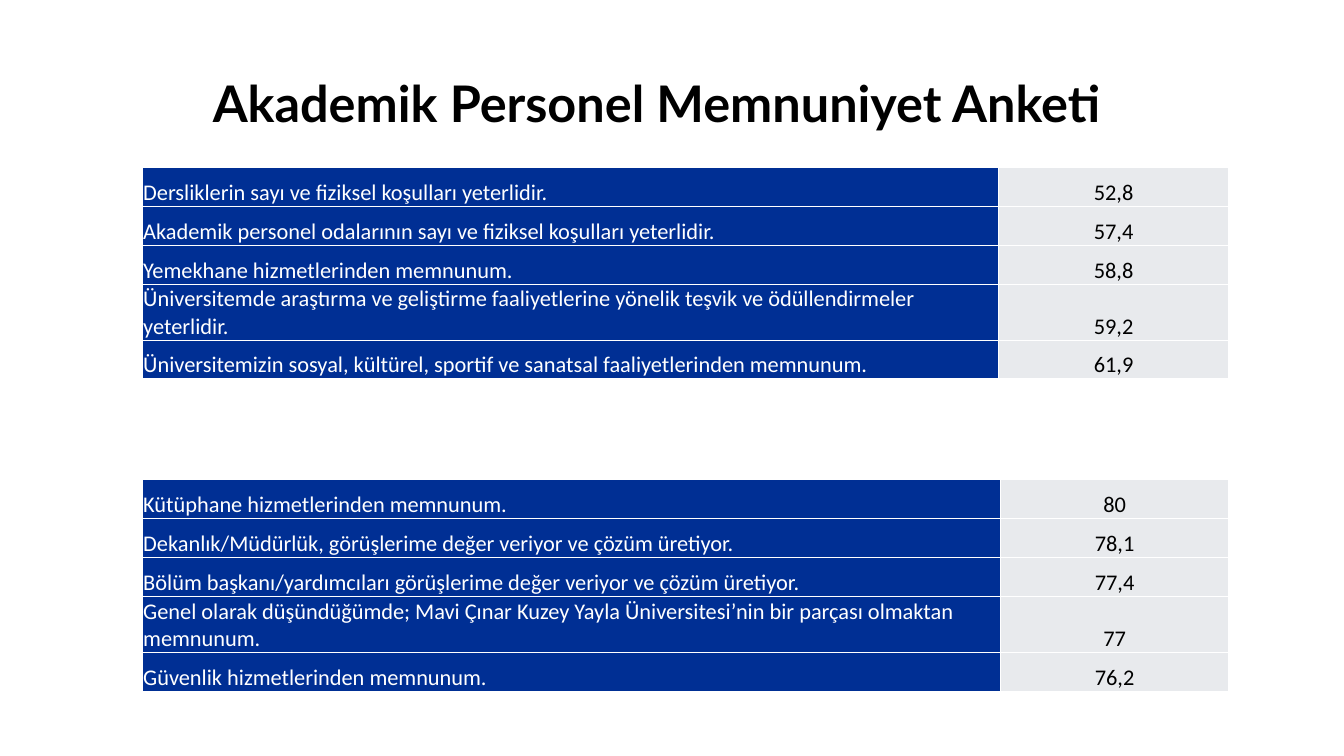
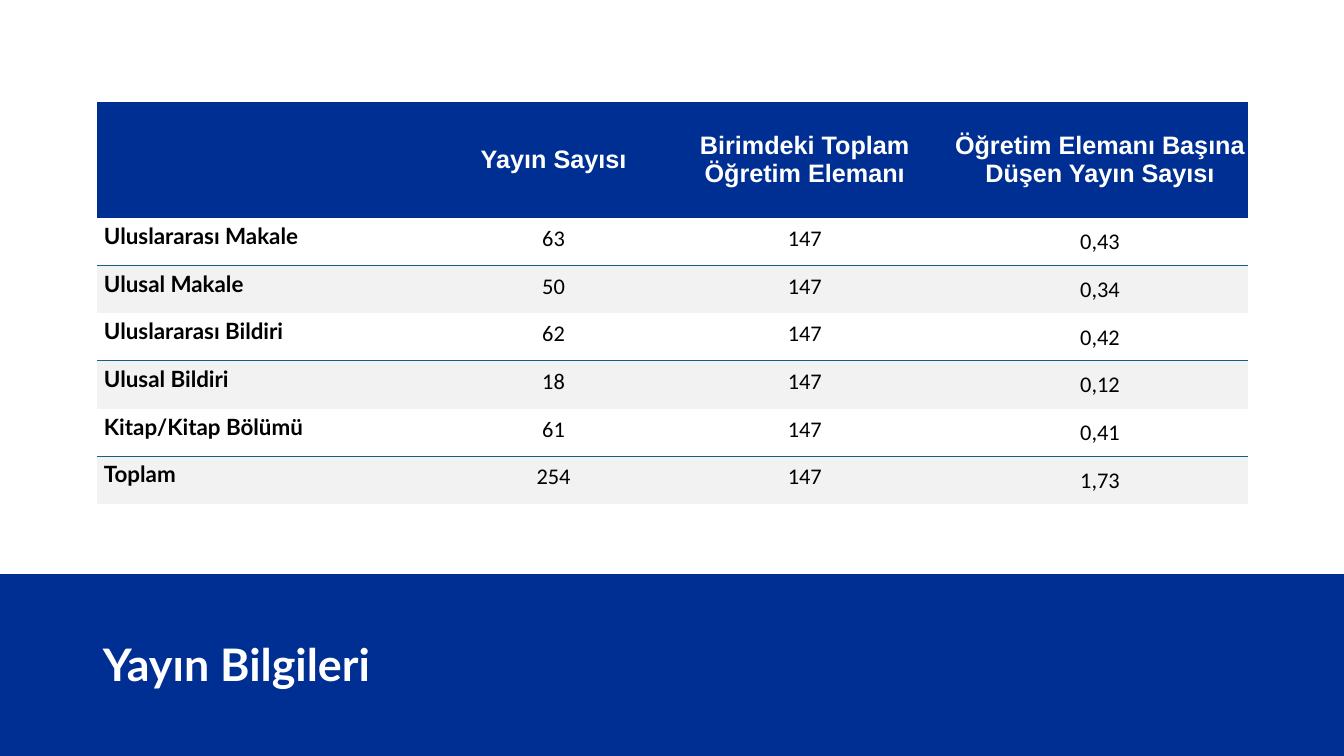
from dataclasses import dataclass

from lxml import etree
from pptx import Presentation
from pptx import util as u
from pptx.dml.color import RGBColor
from pptx.enum import shapes, text
from pptx.oxml import ns

NAVY = RGBColor(0x00, 0x2F, 0x94)
TEAL = RGBColor(0x15, 0x60, 0x82)
MIST = RGBColor(0xE8, 0xEA, 0xED)
STRIPE = RGBColor(0xF2, 0xF2, 0xF2)
WHITE = RGBColor(0xFF, 0xFF, 0xFF)
BLACK = RGBColor(0x00, 0x00, 0x00)

LEFT, CENTER = text.PP_ALIGN.LEFT, text.PP_ALIGN.CENTER
MIDDLE, BOTTOM = text.MSO_ANCHOR.MIDDLE, text.MSO_ANCHOR.BOTTOM
SIDES = ("L", "R", "T", "B")
TIGHT = (0.03, 0.03, 0.03, 0)


@dataclass(frozen=True)
class CellStyle:
    font: str = "Calibri"
    size: int = 16
    color: RGBColor = BLACK
    bold: bool = False
    align: int = CENTER
    anchor: int = MIDDLE
    insets: tuple = TIGHT


QUESTION = CellStyle(color=WHITE, align=LEFT, anchor=BOTTOM)
SCORE = CellStyle(anchor=BOTTOM)
HEADER = CellStyle("Arial", 18, WHITE, True, insets=(0, 0, 0, 0))
LABEL = CellStyle("Lato", bold=True, align=LEFT, insets=(0.18, 0.03, 0.18, 0.33))
COUNT = CellStyle(insets=(0.18, 0.18, 0.18, 0.33))
RATIO = CellStyle()


class Deck:
    def __init__(self):
        self.prs = Presentation()
        self.prs.slide_width, self.prs.slide_height = u.Cm(33.87), u.Cm(19.05)
        self.slide = None

    def add_slide(self):
        self.slide = self.prs.slides.add_slide(self.prs.slide_layouts[5])

    def add_run(self, p, words, font, size, color, bold):
        r = p.add_run()
        r.text = words
        r.font.name, r.font.size = font, u.Pt(size)
        r.font.color.rgb, r.font.bold = color, bold

    def title(self, words, box, size, color, align, spacing=1.0):
        sp = self.slide.shapes.title
        sp.left, sp.top, sp.width, sp.height = map(u.Cm, box)
        tf = sp.text_frame
        tf.word_wrap, tf.auto_size = True, text.MSO_AUTO_SIZE.NONE
        tf.vertical_anchor = MIDDLE
        p = tf.paragraphs[0]
        p.alignment, p.line_spacing = align, spacing
        self.add_run(p, words, "Lato", size, color, True)

    def band(self, top):
        width, height = self.prs.slide_width, self.prs.slide_height
        sp = self.slide.shapes.add_shape(
            shapes.MSO_SHAPE.RECTANGLE, 0, u.Cm(top), width, height - u.Cm(top))
        sp.shadow.inherit = False
        sp.fill.solid()
        sp.fill.fore_color.rgb = NAVY
        sp.line.fill.background()
        self.slide.shapes._spTree.insert(2, sp._element)

    def table(self, left, top, widths, heights):
        frame = self.slide.shapes.add_table(
            len(heights), len(widths), u.Cm(left), u.Cm(top),
            u.Cm(sum(widths)), u.Cm(sum(heights)))
        table = frame.table
        table.first_row = table.horz_banding = False
        for column, width in zip(table.columns, widths):
            column.width = u.Cm(width)
        for row, height in zip(table.rows, heights):
            row.height = u.Cm(height)
        return table

    def borders(self, cell, sides, color):
        tc_pr = cell._tc.get_or_add_tcPr()
        for side in SIDES:
            ln = etree.SubElement(tc_pr, ns.qn(f"a:ln{side}"), w=str(u.Pt(1)))
            if side in sides:
                fill = etree.SubElement(ln, ns.qn("a:solidFill"))
                etree.SubElement(fill, ns.qn("a:srgbClr"), val=str(color))
            else:
                etree.SubElement(ln, ns.qn("a:noFill"))

    def cell(self, cell, words, style, fill=None, sides="", line=TEAL):
        self.borders(cell, sides, line)
        if fill is None:
            cell.fill.background()
        else:
            cell.fill.solid()
            cell.fill.fore_color.rgb = fill
        (cell.margin_left, cell.margin_top,
         cell.margin_right, cell.margin_bottom) = map(u.Cm, style.insets)
        cell.vertical_anchor = style.anchor
        p = cell.text_frame.paragraphs[0]
        p.alignment = style.align
        if words:
            self.add_run(p, words, style.font, style.size, style.color, style.bold)

    def score_table(self, top, widths, rows):
        table = self.table(3.58, top, widths, [0.98] * len(rows))
        for i, (question, score) in enumerate(rows):
            self.cell(table.cell(i, 0), question, QUESTION, NAVY, SIDES, WHITE)
            self.cell(table.cell(i, 1), score, SCORE, MIST, SIDES, WHITE)

    def publication_table(self, header, rows):
        table = self.table(2.44, 2.57, [8.9, 5.22, 7.44, 7.44],
                           [2.92] + [1.18] * len(rows))
        for j, words in enumerate(header):
            self.cell(table.cell(0, j), words, HEADER, NAVY)
        for i, row in enumerate(rows, 1):
            fill, sides = (None, "B") if i % 2 else (STRIPE, "T")
            for j, (words, style) in enumerate(zip(row, (LABEL, COUNT, COUNT, RATIO))):
                self.cell(table.cell(i, j), words, style, fill, sides)


LOWEST = [
    ("Dersliklerin sayı ve fiziksel koşulları yeterlidir.", "52,8"),
    ("Akademik personel odalarının sayı ve fiziksel koşulları yeterlidir.", "57,4"),
    ("Yemekhane hizmetlerinden memnunum.", "58,8"),
    ("Üniversitemde araştırma ve geliştirme faaliyetlerine yönelik teşvik ve "
     "ödüllendirmeler yeterlidir.", "59,2"),
    ("Üniversitemizin sosyal, kültürel, sportif ve sanatsal faaliyetlerinden "
     "memnunum.", "61,9"),
]
HIGHEST = [
    ("Kütüphane hizmetlerinden memnunum.", "80"),
    ("Dekanlık/Müdürlük, görüşlerime değer veriyor ve çözüm üretiyor.", "78,1"),
    ("Bölüm başkanı/yardımcıları görüşlerime değer veriyor ve çözüm üretiyor.", "77,4"),
    ("Genel olarak düşündüğümde; Mavi Çınar Kuzey Yayla Üniversitesi’nin bir "
     "parçası olmaktan memnunum.", "77"),
    ("Güvenlik hizmetlerinden memnunum.", "76,2"),
]
PUBLICATION_HEADER = ["", "Yayın Sayısı", "Birimdeki Toplam Öğretim Elemanı",
                      "Öğretim Elemanı Başına Düşen Yayın Sayısı"]
PUBLICATIONS = [
    ("Uluslararası Makale", "63", "147", "0,43"),
    ("Ulusal Makale", "50", "147", "0,34"),
    ("Uluslararası Bildiri", "62", "147", "0,42"),
    ("Ulusal Bildiri", "18", "147", "0,12"),
    ("Kitap/Kitap Bölümü", "61", "147", "0,41"),
    ("Toplam", "254", "147", "1,73"),
]


def main():
    deck = Deck()

    deck.add_slide()
    deck.title("Akademik Personel Memnuniyet Anketi",
               (3.33, 1.65, 26.44, 1.88), 36, BLACK, CENTER)
    deck.score_table(4.22, [21.59, 5.79], LOWEST)
    deck.score_table(12.09, [21.64, 5.74], HIGHEST)

    deck.add_slide()
    deck.band(14.47)
    deck.title("Yayın Bilgileri", (2.34, 15.54, 19.08, 2.54), 32, WHITE, LEFT, 0.9)
    deck.publication_table(PUBLICATION_HEADER, PUBLICATIONS)

    deck.prs.save("out.pptx")


if __name__ == "__main__":
    main()
